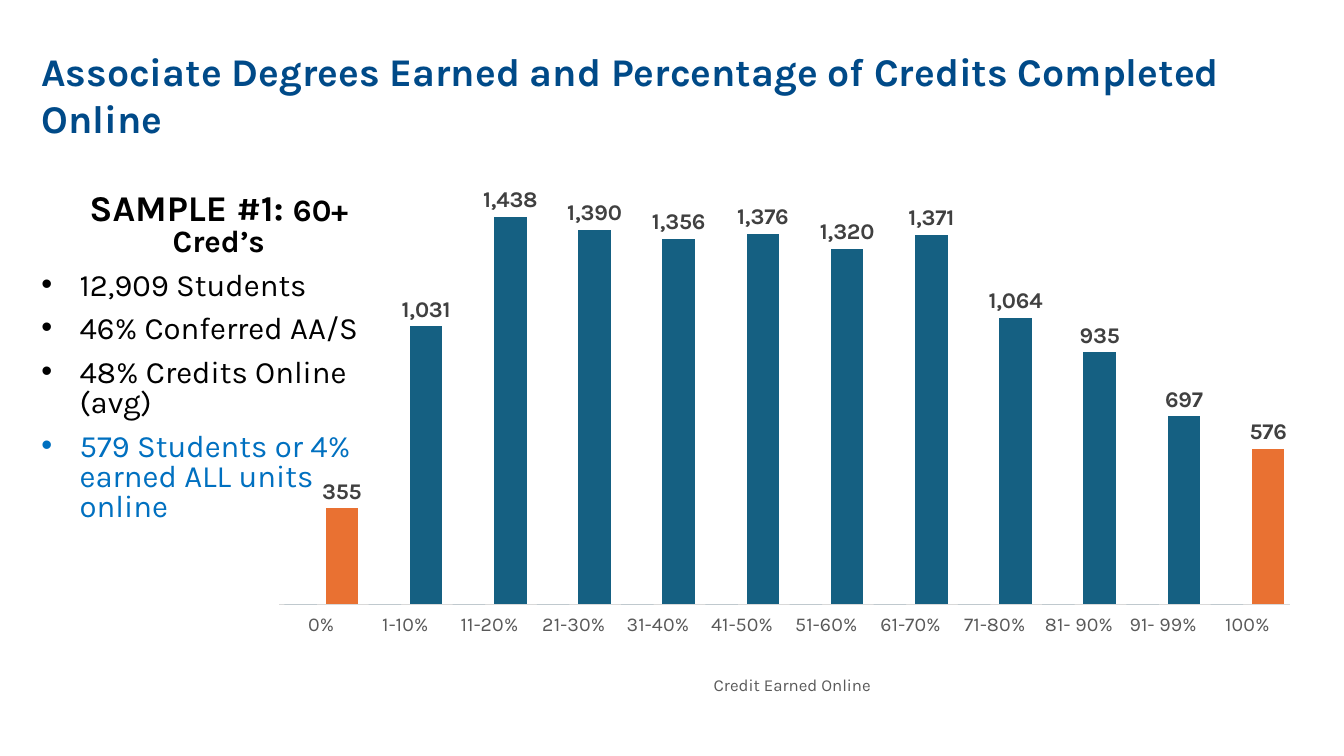
from dataclasses import dataclass

from lxml.etree import SubElement
from pptx import Presentation
from pptx.chart.data import CategoryChartData
from pptx.dml.color import RGBColor
from pptx.enum.chart import XL_CHART_TYPE, XL_LABEL_POSITION, XL_TICK_LABEL_POSITION, XL_TICK_MARK
from pptx.enum.text import MSO_ANCHOR, MSO_AUTO_SIZE, PP_ALIGN
from pptx.oxml import parse_xml
from pptx.oxml.ns import nsdecls, qn
from pptx.util import Inches, Pt

FONT = "Karla"
COLORS = {
    "title": "004A88", "text": "000000", "highlight": "0070C0", "bar": "156082",
    "end_bar": "E97132", "label": "404040", "axis": "595959", "axis_line": "D9D9D9",
}
CREDIT_SHARES = ["0%", "1-10%", "11-20%", "21-30%", "31-40%", "41-50%",
                 "51-60%", "61-70%", "71-80%", "81- 90%", "91- 99%", "100%"]
DEGREES = [355, 1031, 1438, 1390, 1356, 1376, 1320, 1371, 1064, 935, 697, 576]


@dataclass
class Box:
    left: float
    top: float
    width: float
    height: float


@dataclass
class Finding:
    text: str
    color: str = "text"


FINDINGS = [
    Finding("12,909 Students"),
    Finding("46% Conferred AA/S"),
    Finding("48% Credits Online (avg)"),
    Finding("579 Students or 4% earned ALL units online", "highlight"),
]


def format_font(font, *, size: float, color: str, bold: bool = False) -> None:
    font.name = FONT
    font.size = Pt(size)
    font.bold = bold
    font.color.rgb = RGBColor.from_string(COLORS[color])


def add_text(paragraph, text: str, **style) -> None:
    run = paragraph.add_run()
    run.text = text
    format_font(run.font, **style)


def place_text(shape, box: Box):
    shape.left, shape.top = Inches(box.left), Inches(box.top)
    shape.width, shape.height = Inches(box.width), Inches(box.height)
    frame = shape.text_frame
    frame.word_wrap = True
    frame.auto_size = MSO_AUTO_SIZE.NONE
    frame.vertical_anchor = MSO_ANCHOR.TOP
    return frame


def set_bullet(paragraph, bullet: str = "") -> None:
    properties = paragraph._p.get_or_add_pPr()
    if bullet:
        properties.set("marL", str(Inches(0.38)))
        properties.set("indent", str(-Inches(0.38)))
        SubElement(properties, qn("a:buChar")).set("char", bullet)
    else:
        properties.set("marL", str(Inches(0.06)))
        properties.set("marR", str(Inches(0.06)))
        properties.set("indent", "0")
        SubElement(properties, qn("a:buNone"))


def add_title(slide) -> None:
    frame = place_text(slide.shapes.title, Box(0.31, 0.42, 13.03, 0.88))
    paragraph = frame.paragraphs[0]
    paragraph.alignment = PP_ALIGN.LEFT
    add_text(paragraph, "Associate Degrees Earned and Percentage of Credits Completed Online",
             size=28, color="title", bold=True)


def add_findings(slide) -> None:
    frame = place_text(slide.placeholders[1], Box(0.31, 1.87, 3.72, 3.15))
    heading = frame.paragraphs[0]
    set_bullet(heading)
    heading.alignment = PP_ALIGN.CENTER
    heading.line_spacing = 0.8
    heading.space_before = Pt(0)
    add_text(heading, "SAMPLE #1: ", size=25.9, color="text", bold=True)
    add_text(heading, "60+ Cred’s", size=22.2, color="text", bold=True)
    for finding in FINDINGS:
        paragraph = frame.add_paragraph()
        set_bullet(paragraph, "•")
        paragraph.alignment = PP_ALIGN.LEFT
        paragraph.line_spacing = 0.8
        paragraph.space_before = Pt(10)
        add_text(paragraph, finding.text, size=22.2, color=finding.color)


def make_layout(x: float, y: float, width: float = 0, height: float = 0):
    size = f'<c:w val="{width}"/><c:h val="{height}"/>' if width else ""
    target = '<c:layoutTarget val="inner"/>' if width else ""
    return parse_xml(
        f'<c:layout {nsdecls("c")}><c:manualLayout>{target}<c:xMode val="edge"/>'
        f'<c:yMode val="edge"/><c:x val="{x}"/><c:y val="{y}"/>{size}'
        '</c:manualLayout></c:layout>')


def remove_layout(element) -> None:
    for layout in element.findall(qn("c:layout")):
        element.remove(layout)


def format_axes(chart) -> None:
    value_axis = chart.value_axis
    value_axis.minimum_scale, value_axis.maximum_scale = 0, 1600
    value_axis.has_major_gridlines = False
    value_axis.visible = False
    axis = chart.category_axis
    axis.major_tick_mark = XL_TICK_MARK.NONE
    axis.tick_label_position = XL_TICK_LABEL_POSITION.LOW
    axis.format.line.color.rgb = RGBColor.from_string(COLORS["axis_line"])
    axis.format.line.width = Pt(0.75)
    format_font(axis.tick_labels.font, size=14, color="axis")
    add_text(axis.axis_title.text_frame.paragraphs[0], "Credit Earned Online",
             size=12, color="axis")
    title = axis.axis_title._element
    remove_layout(title)
    title.find(qn("c:tx")).addnext(make_layout(0.43, 0.92))


def format_series(plot) -> None:
    for series in plot.series:
        series.format.fill.solid()
        series.format.fill.fore_color.rgb = RGBColor.from_string(COLORS["bar"])
    degrees = plot.series[1]
    for index in (0, len(DEGREES) - 1):
        fill = degrees.points[index].format.fill
        fill.solid()
        fill.fore_color.rgb = RGBColor.from_string(COLORS["end_bar"])
    labels = degrees.data_labels
    labels.show_value = True
    labels.number_format = "#,##0"
    labels.number_format_is_linked = False
    labels.position = XL_LABEL_POSITION.OUTSIDE_END
    format_font(labels.font, size=16, color="label", bold=True)


def add_degree_chart(slide) -> None:
    data = CategoryChartData()
    data.categories = CREDIT_SHARES
    data.add_series("Series 1", [0] * len(DEGREES))
    data.add_series("Series 2", DEGREES)
    frame = slide.shapes.add_chart(XL_CHART_TYPE.COLUMN_CLUSTERED, Inches(2.56), Inches(1.61),
                                   Inches(10.44), Inches(5.48), data)
    slide.shapes._spTree.insert(2, frame._element)
    chart = frame.chart
    chart.has_title = False
    chart.has_legend = False
    format_font(chart.font, size=10, color="text")
    plot = chart.plots[0]
    plot.vary_by_categories = False
    plot.gap_width, plot.overlap = 32, -27
    format_series(plot)
    format_axes(chart)
    plot_area = chart._chartSpace.chart.plotArea
    remove_layout(plot_area)
    plot_area.insert(0, make_layout(0.02, 0.02, 0.96, 0.78))


def main() -> None:
    """Build the slide on degrees earned by share of online credits."""
    presentation = Presentation()
    presentation.slide_width, presentation.slide_height = Inches(13.33), Inches(7.5)
    slide = presentation.slides.add_slide(presentation.slide_layouts[1])
    add_title(slide)
    add_findings(slide)
    add_degree_chart(slide)
    presentation.save("out.pptx")


if __name__ == "__main__":
    main()
